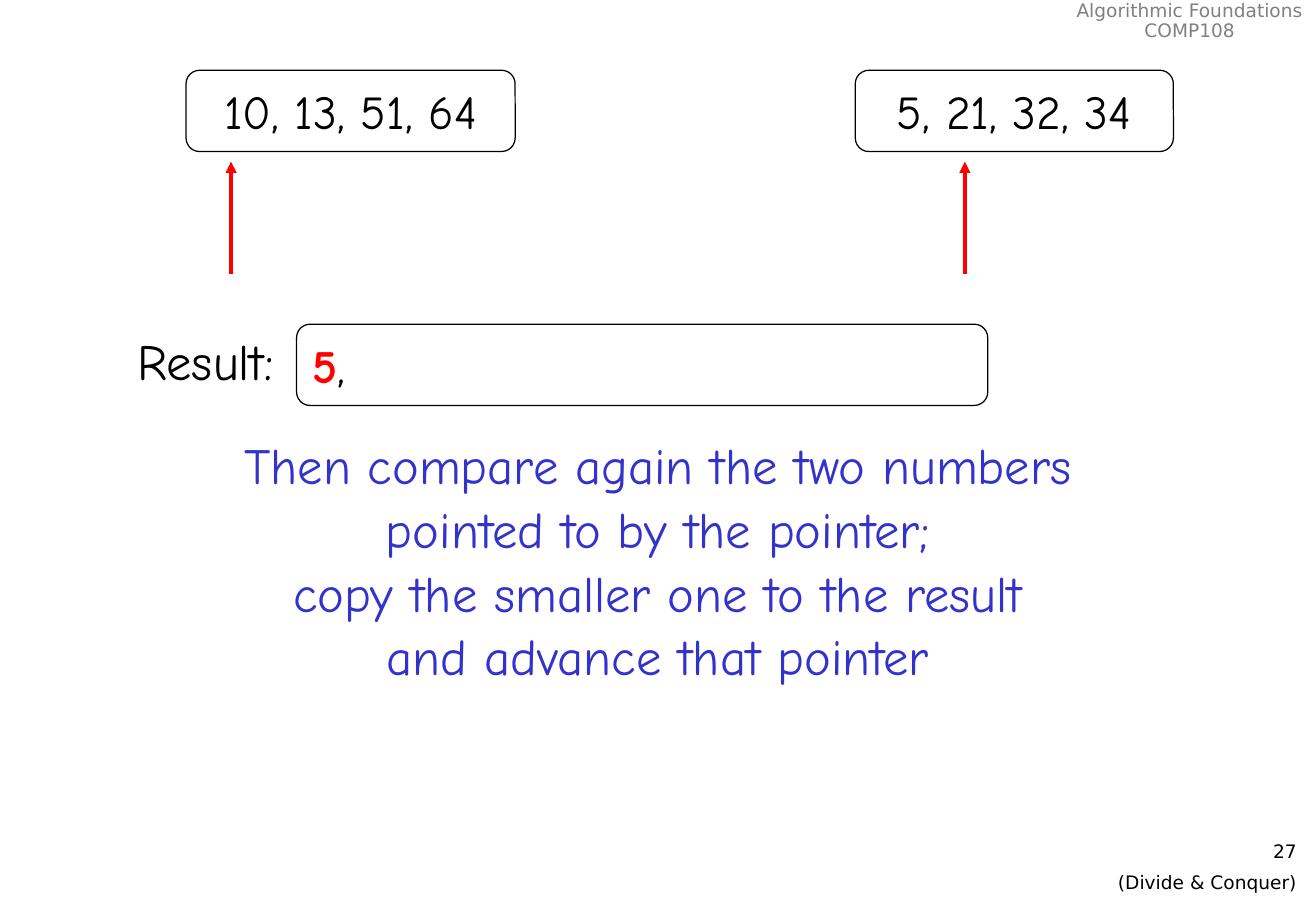
from lxml import etree
from pptx import Presentation
from pptx.dml.color import RGBColor
from pptx.enum.shapes import MSO_CONNECTOR, MSO_SHAPE
from pptx.enum.text import MSO_ANCHOR, PP_ALIGN
from pptx.oxml.ns import qn
from pptx.util import Cm, Pt

LEFT, CENTER, RIGHT = PP_ALIGN.LEFT, PP_ALIGN.CENTER, PP_ALIGN.RIGHT
ROUNDED, STRAIGHT = MSO_SHAPE.ROUNDED_RECTANGLE, MSO_CONNECTOR.STRAIGHT
MIDDLE = MSO_ANCHOR.MIDDLE

COLORS = {"text": "000000", "paper": "FFFFFF", "pointer": "FF0000",
          "message": "3333CC", "header": "808080"}
BODY_FONT, SMALL_FONT = "Comic Neue", "DejaVu Sans"
SLIDE_WIDTH, SLIDE_HEIGHT = 27.51, 19.05

# Lengths in centimetres
HEADER = ["Algorithmic Foundations", "COMP108"]
FOOTER = ["27", "(Divide & Conquer)"]
MESSAGE = ["Then compare again the two numbers",
           "pointed to by the pointer;",
           "copy the smaller one to the result",
           "and advance that pointer"]
# numbers, box left, box width, pointer position
SORTED_LISTS = [("10, 13, 51, 64", 3.89, 6.88, 4.83),
                ("5, 21, 32, 34", 17.88, 6.65, 20.17)]
RESULT_LABEL, RESULT_MERGED, RESULT_REST = "Result:", "5", ","

BOX_HEIGHT = 1.7
LISTS_TOP, RESULT_TOP = 1.47, 6.78
POINTER_TIP, POINTER_END = 3.38, 5.72


def rgb(name):
    return RGBColor.from_string(COLORS[name])


def format_run(run, font, size, color, bold=False):
    run.font.name = font
    run.font.size = Pt(size)
    run.font.color.rgb = rgb(color)
    run.font.bold = bold


def add_text(slide, place, lines, font, size, color, align,
             spacing=1.0, gap=0, wrap=True):
    """Add a text box; gap is the space in points before later paragraphs."""
    frame = slide.shapes.add_textbox(*map(Cm, place)).text_frame
    frame.text = "\n".join(lines)
    frame.word_wrap = wrap
    for index, paragraph in enumerate(frame.paragraphs):
        paragraph.alignment = align
        paragraph.line_spacing = spacing
        paragraph.space_before = Pt(gap if index else 0)
        format_run(paragraph.runs[0], font, size, color)


def add_number_box(slide, left, top, width, text, align, color="text", bold=False):
    """Add a rounded box of numbers and return its paragraph."""
    shape = slide.shapes.add_shape(
        ROUNDED, Cm(left), Cm(top), Cm(width), Cm(BOX_HEIGHT))
    shape.shadow.inherit = False
    shape.fill.solid()
    shape.fill.fore_color.rgb = rgb("paper")
    shape.line.color.rgb = rgb("text")
    shape.line.width = Pt(0.75)
    frame = shape.text_frame
    frame.word_wrap = True
    frame.vertical_anchor = MIDDLE
    frame.text = text
    paragraph = frame.paragraphs[0]
    paragraph.alignment = align
    format_run(paragraph.runs[0], BODY_FONT, 28, color, bold)
    return paragraph


def add_pointer(slide, x):
    arrow = slide.shapes.add_connector(
        STRAIGHT, Cm(x), Cm(POINTER_END), Cm(x), Cm(POINTER_TIP))
    arrow.line.color.rgb = rgb("pointer")
    arrow.line.width = Pt(2.25)
    etree.SubElement(arrow.line._get_or_add_ln(), qn("a:tailEnd"), type="triangle")
    etree.SubElement(arrow._element.spPr, qn("a:effectLst"))


def main():
    presentation = Presentation()
    presentation.slide_width = Cm(SLIDE_WIDTH)
    presentation.slide_height = Cm(SLIDE_HEIGHT)
    slide = presentation.slides.add_slide(presentation.slide_layouts[6])

    add_text(slide, (22.23, -0.1, 5.28, 1.09), HEADER, SMALL_FONT, 11,
             "header", CENTER, spacing=0.9, wrap=False)
    add_text(slide, (21.62, 17.45, 5.74, 1.27), FOOTER, SMALL_FONT, 11,
             "text", RIGHT, gap=5)

    for numbers, left, width, pointer in SORTED_LISTS:
        add_number_box(slide, left, LISTS_TOP, width, numbers, CENTER)
        add_pointer(slide, pointer)

    add_text(slide, (0, 8.89, SLIDE_WIDTH, 5.56), MESSAGE, BODY_FONT, 30,
             "message", CENTER, spacing=1.05)

    result = add_number_box(slide, 6.2, RESULT_TOP, 14.45, RESULT_MERGED, LEFT,
                            color="pointer", bold=True)
    rest = result.add_run()
    rest.text = RESULT_REST
    format_run(rest, BODY_FONT, 28, "text")
    add_text(slide, (0.46, RESULT_TOP, 5.51, 1.55), [RESULT_LABEL], BODY_FONT, 30,
             "text", RIGHT)

    presentation.save("out.pptx")


if __name__ == "__main__":
    main()
